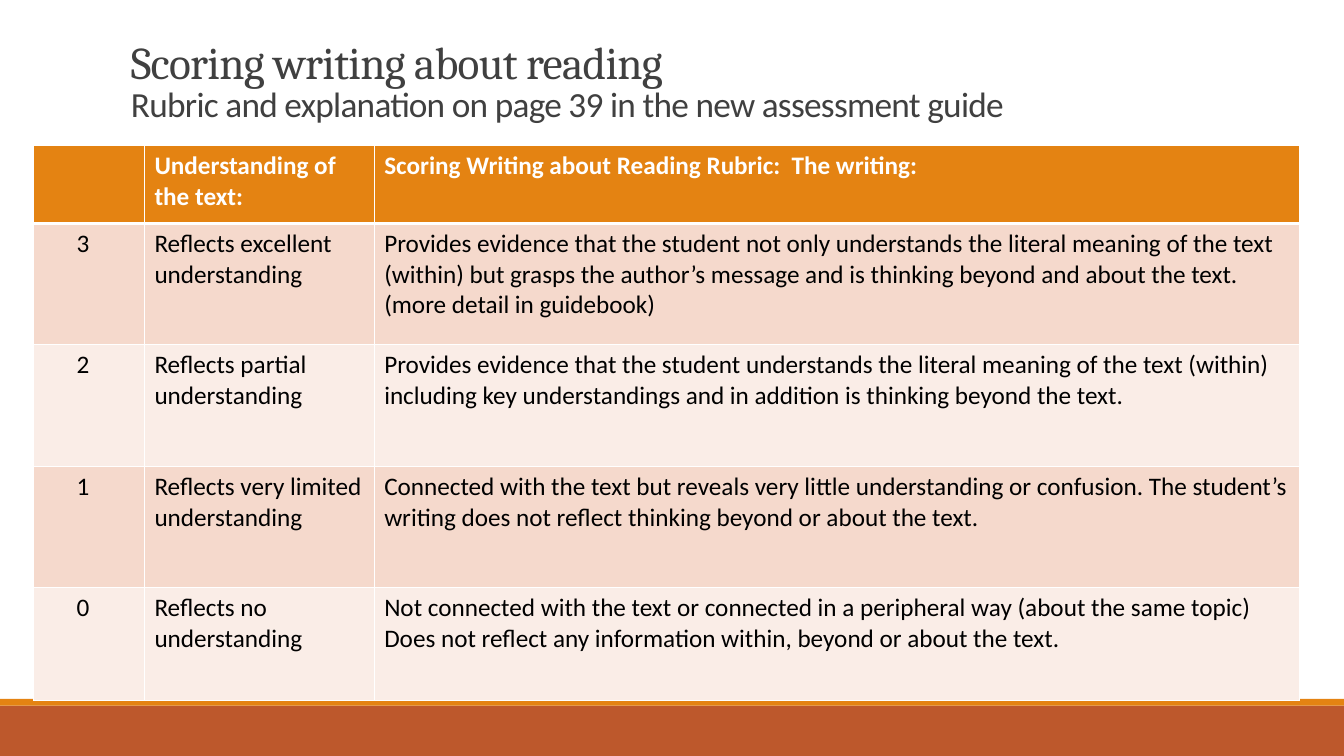
import pptx
import pptx.util
import pptx.dml.color
import pptx.enum.shapes
import pptx.enum.text
import pptx.oxml.ns
import lxml.etree

Cm = pptx.util.Cm
Pt = pptx.util.Pt

TITLE_LINES = [
    ("Scoring writing about reading", "Cambria", 32.4),
    ("Rubric and explanation on page 39 in the new assessment guide", "Calibri", 25.2),
]
RUBRIC = [
    ("", "Understanding of the text:", "Scoring Writing about Reading Rubric:  The writing:"),
    ("3", "Reflects excellent understanding",
     "Provides evidence that the student not only understands the literal meaning of the text "
     "(within) but grasps the author’s message and is thinking beyond and about the text. "
     "(more detail in guidebook)"),
    ("2", "Reflects partial understanding",
     "Provides evidence that the student understands the literal meaning of the text (within) "
     "including key understandings and in addition is thinking beyond the text."),
    ("1", "Reflects very limited understanding",
     "Connected with the text but reveals very little understanding or confusion. The student’s "
     "writing does not reflect thinking beyond or about the text."),
    ("0", "Reflects no understanding",
     "Not connected with the text or connected in a peripheral way (about the same topic) "
     "Does not reflect any information within, beyond or about the text."),
]
COLORS = {
    "title": "404040", "header": "E48312", "footer": "BD582C", "odd_row": "F5D9CC",
    "even_row": "FAEDE7", "rule": "FFFFFF", "header_text": "FFFFFF", "body_text": "000000",
}
SLIDE_WIDTH, SLIDE_HEIGHT = 33.87, 19.05
FOOTER_HEIGHT, STRIPE_HEIGHT = 1.27, 0.17
COLUMN_WIDTHS = [2.79, 5.79, 23.32]
ROW_HEIGHTS = [1.97, 3.06, 3.06, 3.06, 2.85]
SCORE_INDENT = 1.08


def color(name):
    return pptx.dml.color.RGBColor.from_string(COLORS[name])


def add_band(slide, top, height, fill):
    band = slide.shapes.add_shape(
        pptx.enum.shapes.MSO_SHAPE.RECTANGLE, 0, Cm(top), Cm(SLIDE_WIDTH), Cm(height))
    band.shadow.inherit = False
    band.fill.solid()
    band.fill.fore_color.rgb = color(fill)
    band.line.fill.background()


def add_run(paragraph, text, font, size, text_color, bold=False):
    run = paragraph.add_run()
    run.text = text
    run.font.name = font
    run.font.size = Pt(size)
    run.font.bold = bold
    run.font.color.rgb = color(text_color)
    return run


def add_title(slide):
    title = slide.shapes.add_textbox(Cm(3.05), Cm(0.79), Cm(27.94), Cm(3.4))
    frame = title.text_frame
    frame.word_wrap = True
    frame.vertical_anchor = pptx.enum.text.MSO_ANCHOR.BOTTOM
    frame.margin_bottom = Cm(1.04)
    paragraph = frame.paragraphs[0]
    paragraph.line_spacing = 0.85
    for index, (text, font, size) in enumerate(TITLE_LINES):
        if index:
            paragraph.add_line_break()
        run = add_run(paragraph, text, font, size, "title")
        run.font._element.set("spc", "-50")


def set_borders(cell, top, bottom):
    properties = cell._tc.get_or_add_tcPr()
    qn = pptx.oxml.ns.qn
    for side, width in (("L", 1), ("R", 1), ("T", top), ("B", bottom)):
        border = lxml.etree.SubElement(properties, qn("a:ln" + side), w=str(Pt(width)))
        fill = lxml.etree.SubElement(border, qn("a:solidFill"))
        lxml.etree.SubElement(fill, qn("a:srgbClr"), val=COLORS["rule"])


def add_rubric(slide):
    table = slide.shapes.add_table(
        len(RUBRIC), len(COLUMN_WIDTHS), Cm(0.85), Cm(3.66),
        Cm(sum(COLUMN_WIDTHS)), Cm(sum(ROW_HEIGHTS))).table
    for column, width in zip(table.columns, COLUMN_WIDTHS):
        column.width = Cm(width)
    for row_index, (row, height) in enumerate(zip(RUBRIC, ROW_HEIGHTS)):
        table.rows[row_index].height = Cm(height)
        is_header = row_index == 0
        fill = "header" if is_header else ("even_row", "odd_row")[row_index % 2]
        text_color = "header_text" if is_header else "body_text"
        for column_index, text in enumerate(row):
            cell = table.cell(row_index, column_index)
            set_borders(cell, 3 if row_index == 1 else 1, 3 if is_header else 1)
            cell.fill.solid()
            cell.fill.fore_color.rgb = color(fill)
            if column_index == 0:
                cell.margin_left = Cm(SCORE_INDENT)
            if text:
                add_run(cell.text_frame.paragraphs[0], text, "Calibri", 18, text_color, is_header)


def main():
    """Build the writing rubric slide."""
    deck = pptx.Presentation()
    deck.slide_width, deck.slide_height = Cm(SLIDE_WIDTH), Cm(SLIDE_HEIGHT)
    slide = deck.slides.add_slide(deck.slide_layouts[6])
    footer_top = SLIDE_HEIGHT - FOOTER_HEIGHT
    add_band(slide, footer_top, FOOTER_HEIGHT, "footer")
    add_band(slide, footer_top - STRIPE_HEIGHT, STRIPE_HEIGHT, "header")
    add_title(slide)
    add_rubric(slide)
    deck.save("out.pptx")


if __name__ == "__main__":
    main()
